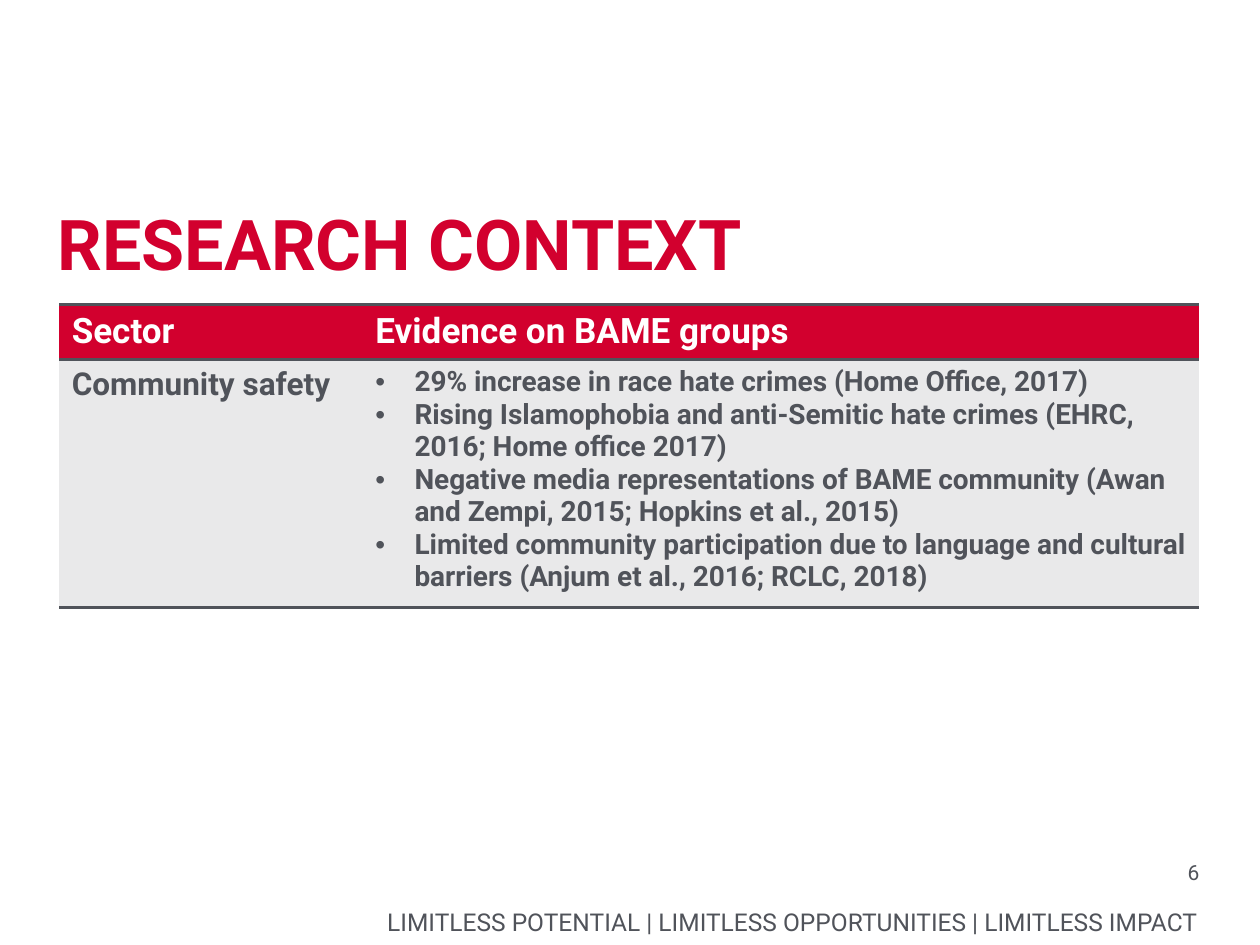
from dataclasses import dataclass

from lxml import etree
from pptx import Presentation
from pptx import util as u
from pptx.dml.color import RGBColor
from pptx.enum import text as t
from pptx.oxml import ns


@dataclass(frozen=True)
class Theme:
    font: str = "Roboto"
    red: str = "D2002E"
    slate: str = "50535A"
    pale: str = "E9E9EA"
    white: str = "FFFFFF"
    title: int = 40
    header: int = 20
    sector: int = 18
    evidence: int = 16
    footer: int = 14
    number: int = 12
    rule: int = 2


THEME = Theme()


@dataclass(frozen=True)
class Label:
    words: str
    box: tuple[float, float, float, float]
    size: int
    color: str = THEME.slate
    bold: bool = False
    align: t.PP_ALIGN = t.PP_ALIGN.RIGHT
    anchor: t.MSO_ANCHOR = t.MSO_ANCHOR.BOTTOM


@dataclass(frozen=True)
class Row:
    height: float
    fill: str
    color: str
    sizes: tuple[int, int]
    sector: str
    evidence: tuple[str, ...]
    bulleted: bool = False


LABELS = [
    Label("LIMITLESS POTENTIAL | LIMITLESS OPPORTUNITIES | LIMITLESS IMPACT",
          (2.11, 7.19, 7.4, 0.24), THEME.footer),
    Label("RESEARCH CONTEXT", (0.46, 1.35, 9.06, 0.91), THEME.title,
          THEME.red, bold=True, align=t.PP_ALIGN.LEFT),
    Label("6", (8.78, 6.82, 0.74, 0.28), THEME.number, anchor=t.MSO_ANCHOR.TOP),
]

COLUMN_WIDTHS = (2.41, 6.64)
ROWS = [
    Row(0.43, THEME.red, THEME.white, (THEME.header, THEME.header),
        "Sector", ("Evidence on BAME groups",)),
    Row(1.91, THEME.pale, THEME.slate, (THEME.sector, THEME.evidence),
        "Community safety", (
            "29% increase in race hate crimes (Home Office, 2017)",
            "Rising Islamophobia and anti-Semitic hate crimes (EHRC, 2016; Home office 2017)",
            "Negative media representations of BAME community (Awan and Zempi, 2015; Hopkins et al., 2015)",
            "Limited community participation due to language and cultural barriers (Anjum et al., 2016; RCLC, 2018)",
        ), bulleted=True),
]


def add_bullet(paragraph, indent: float = 0.31) -> None:
    properties = paragraph._p.get_or_add_pPr()
    properties.set("marL", str(u.Inches(indent)))
    properties.set("indent", str(-u.Inches(indent)))
    etree.SubElement(properties, ns.qn("a:buFont"), typeface="Arial")
    etree.SubElement(properties, ns.qn("a:buChar"), char="•")


def write(frame, lines: tuple[str, ...], *, size: int, color: str, bold: bool = False,
          align: t.PP_ALIGN = t.PP_ALIGN.LEFT, bulleted: bool = False) -> None:
    """Fill a text frame with one paragraph per line."""
    for index, line in enumerate(lines):
        paragraph = frame.add_paragraph() if index else frame.paragraphs[0]
        paragraph.alignment = align
        if bulleted:
            add_bullet(paragraph)
        run = paragraph.add_run()
        run.text = line
        run.font.name = THEME.font
        run.font.size = u.Pt(size)
        run.font.bold = bold
        run.font.color.rgb = RGBColor.from_string(color)


def add_label(slide, label: Label) -> None:
    frame = slide.shapes.add_textbox(*map(u.Inches, label.box)).text_frame
    frame.margin_left = frame.margin_right = frame.margin_top = frame.margin_bottom = 0
    frame.word_wrap = True
    frame.vertical_anchor = label.anchor
    write(frame, (label.words,), size=label.size, color=label.color,
          bold=label.bold, align=label.align)


def set_borders(cell, ruled: str) -> None:
    """Rule the named sides (T, B) and clear the others."""
    properties = cell._tc.get_or_add_tcPr()
    for side in "LRTB":
        line = etree.SubElement(properties, ns.qn(f"a:ln{side}"), w=str(u.Pt(THEME.rule)))
        if side in ruled:
            fill = etree.SubElement(line, ns.qn("a:solidFill"))
            etree.SubElement(fill, ns.qn("a:srgbClr"), val=THEME.slate)
        else:
            etree.SubElement(line, ns.qn("a:noFill"))


def add_evidence_table(slide, left: float, top: float) -> None:
    width, height = sum(COLUMN_WIDTHS), sum(row.height for row in ROWS)
    table = slide.shapes.add_table(len(ROWS), len(COLUMN_WIDTHS),
                                   *map(u.Inches, (left, top, width, height))).table
    table.first_row = table.horz_banding = False
    for column, column_width in zip(table.columns, COLUMN_WIDTHS):
        column.width = u.Inches(column_width)
    for index, row in enumerate(ROWS):
        table.rows[index].height = u.Inches(row.height)
        contents = ((row.sector,), row.evidence)
        for position, (lines, size) in enumerate(zip(contents, row.sizes)):
            cell = table.cell(index, position)
            set_borders(cell, "TB")
            cell.fill.solid()
            cell.fill.fore_color.rgb = RGBColor.from_string(row.fill)
            write(cell.text_frame, lines, size=size, color=row.color, bold=True,
                  bulleted=row.bulleted and position == 1)


def main() -> None:
    presentation = Presentation()
    presentation.slide_width, presentation.slide_height = u.Inches(10), u.Inches(7.5)
    slide = presentation.slides.add_slide(presentation.slide_layouts[6])

    # Title, footer and slide number
    for label in LABELS:
        add_label(slide, label)

    # Sector and evidence table
    add_evidence_table(slide, left=0.47, top=2.42)

    presentation.save("out.pptx")


if __name__ == "__main__":
    main()
